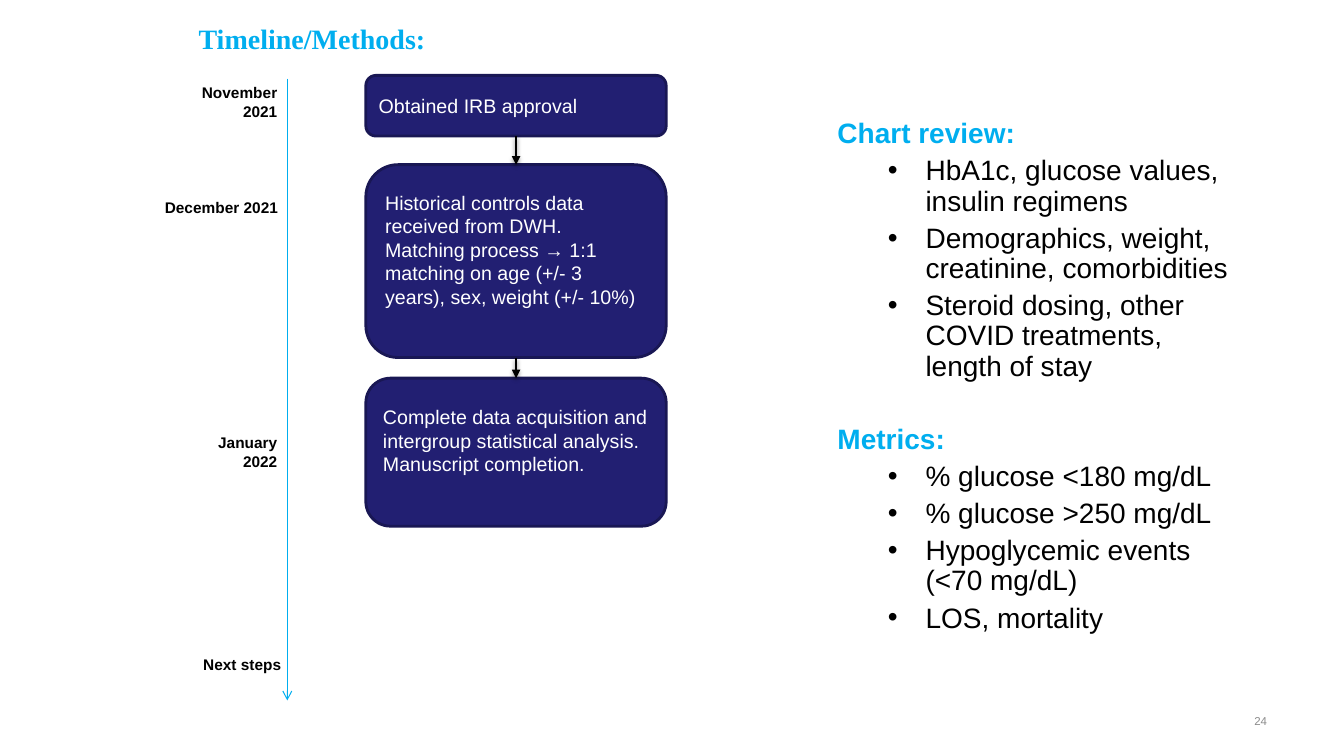
"""Build the study timeline and methods slide."""
from dataclasses import dataclass

from lxml.etree import SubElement
from pptx import Presentation
from pptx.dml.color import RGBColor
from pptx.enum.shapes import MSO_CONNECTOR, MSO_SHAPE
from pptx.enum.text import MSO_ANCHOR, MSO_AUTO_SIZE, PP_ALIGN
from pptx.oxml.ns import qn
from pptx.util import Cm, Pt


@dataclass(frozen=True)
class Theme:
    """Colours, fonts and type sizes."""
    accent: RGBColor = RGBColor(0x00, 0xAE, 0xEF)
    navy: RGBColor = RGBColor(0x22, 0x1F, 0x72)
    edge: RGBColor = RGBColor(0x19, 0x17, 0x54)
    black: RGBColor = RGBColor(0, 0, 0)
    white: RGBColor = RGBColor(255, 255, 255)
    grey: RGBColor = RGBColor(0x8C, 0x8C, 0x8C)
    sans: str = "Arial"
    serif: str = "Times New Roman"
    heading: float = 20
    step: float = 14
    label: float = 11
    number: float = 8.2


def apply(target, values):
    """Set every attribute named in a dict."""
    for name, value in values.items():
        setattr(target, name, value)


def place(shape, left, top, width, height):
    """Position a shape in centimetres."""
    apply(shape, {"left": Cm(left), "top": Cm(top),
                  "width": Cm(width), "height": Cm(height)})


class MethodsSlide:
    """Draws the elements of one slide in one style."""

    def __init__(self, page, theme):
        """Keep the page and its theme."""
        self.page = page
        self.theme = theme

    def add_span(self, para, text, size, color, bold=False, font=None):
        """Add formatted text to a paragraph."""
        span = para.add_run()
        span.text = text
        apply(span.font, {"size": Pt(size), "bold": bold,
                          "name": font or self.theme.sans})
        span.font.color.rgb = color

    def title(self, text, *area):
        """Fill the title placeholder."""
        box = self.page.shapes.title
        place(box, *area)
        apply(box.text_frame, {"vertical_anchor": MSO_ANCHOR.TOP, "word_wrap": True,
                               "auto_size": MSO_AUTO_SIZE.NONE})
        para = box.text_frame.paragraphs[0]
        para.alignment = PP_ALIGN.LEFT
        self.add_span(para, text, self.theme.heading, self.theme.accent, True,
                      self.theme.serif)

    def label(self, text, size, color, bold, anchor, *area):
        """Add a right-aligned text box."""
        box = self.page.shapes.add_textbox(*map(Cm, area))
        apply(box.text_frame, {"word_wrap": True, "vertical_anchor": anchor})
        para = box.text_frame.paragraphs[0]
        para.alignment = PP_ALIGN.RIGHT
        self.add_span(para, text, size, color, bold)

    def step(self, lines, bottom_inset, *area):
        """Add a rounded box for one step of the study."""
        box = self.page.shapes.add_shape(MSO_SHAPE.ROUNDED_RECTANGLE, *map(Cm, area))
        box.shadow.inherit = False
        box.fill.solid()
        box.fill.fore_color.rgb = self.theme.navy
        box.line.color.rgb = self.theme.edge
        box.line.width = Pt(2)
        frame = box.text_frame
        apply(frame, {"word_wrap": True, "vertical_anchor": MSO_ANCHOR.MIDDLE,
                      "margin_bottom": Cm(bottom_inset)})
        for index, line in enumerate(lines):
            para = frame.add_paragraph() if index else frame.paragraphs[0]
            para.alignment = PP_ALIGN.LEFT
            self.add_span(para, line, self.theme.step, self.theme.white)
        return box

    def arrow(self, start, end, color, width, head):
        """Add a straight arrow and return it with its effect list."""
        line = self.page.shapes.add_connector(
            MSO_CONNECTOR.STRAIGHT, *map(Cm, start + end))
        line.line.color.rgb = color
        line.line.width = Pt(width)
        properties = line.element.spPr
        SubElement(properties.find(qn("a:ln")), qn("a:tailEnd"), type=head)
        return line, SubElement(properties, qn("a:effectLst"))

    def join(self, upper, lower):
        """Link two steps with a softly shadowed arrow."""
        line, effects = self.arrow((0, 0), (0, 0), self.theme.black, 2, "triangle")
        line.begin_connect(upper, 2)
        line.end_connect(lower, 0)
        shadow = SubElement(effects, qn("a:outerShdw"), blurRad=str(Pt(3.1)),
                            dist=str(Pt(1.6)), dir="5400000", rotWithShape="0")
        tint = SubElement(shadow, qn("a:srgbClr"), val=str(self.theme.black))
        SubElement(tint, qn("a:alpha"), val="38000")

    def lists(self, sections, *area):
        """Fill the body placeholder with headed bullet lists."""
        box = self.page.placeholders[1]
        place(box, *area)
        frame = box.text_frame
        apply(frame, {"word_wrap": True, "vertical_anchor": MSO_ANCHOR.TOP,
                      "auto_size": MSO_AUTO_SIZE.NONE})
        for index, (heading, items) in enumerate(sections.items()):
            para = frame.add_paragraph() if index else frame.paragraphs[0]
            self.bullet(para, None, 0, 0)
            apply(para, {"line_spacing": Pt(42), "space_before": Pt(10 if index else 0)})
            self.add_span(para, heading, self.theme.heading, self.theme.accent, True)
            for item in items:
                para = frame.add_paragraph()
                para.level = 1
                self.bullet(para, "•", 2.22, -0.95)
                apply(para, {"line_spacing": 0.9, "space_before": Pt(5)})
                self.add_span(para, item, self.theme.heading, self.theme.black)

    def bullet(self, para, sign, margin, indent):
        """Set the bullet sign and indents of a paragraph."""
        para.alignment = PP_ALIGN.LEFT
        properties = para._p.get_or_add_pPr()
        properties.set("marL", str(Cm(margin)))
        properties.set("indent", str(Cm(indent)))
        if sign:
            SubElement(properties, qn("a:buFont"), typeface=self.theme.sans)
            SubElement(properties, qn("a:buChar"), char=sign)
        else:
            SubElement(properties, qn("a:buNone"))


DATES = [
    ("November 2021", 4.24, 1.98, 3.0, 1.19),
    ("December 2021", 3.84, 4.88, 3.42, 0.74),
    ("January 2022", 4.62, 10.8, 2.62, 1.19),
    ("Next steps", 4.72, 16.38, 2.62, 0.74),
]
STEPS = [
    (["Obtained IRB approval"], 0.13, 1.9, 1.53),
    (["Historical controls data received from DWH.",
      "Matching process → 1:1 matching on age (+/- 3 years), sex, weight (+/- 10%)"],
     0.72, 4.15, 4.86),
    (["Complete data acquisition and intergroup statistical analysis.",
      "Manuscript completion."], 0.72, 9.53, 3.73),
]
SECTIONS = {
    "Chart review:": [
        "HbA1c, glucose values, insulin regimens",
        "Demographics, weight, creatinine, comorbidities",
        "Steroid dosing, other COVID treatments, length of stay",
    ],
    "Metrics:": [
        "% glucose <180 mg/dL",
        "% glucose >250 mg/dL",
        "Hypoglycemic events (<70 mg/dL)",
        "LOS, mortality",
    ],
}


def main():
    """Build and save the deck."""
    deck = Presentation()
    apply(deck, {"slide_width": Cm(33.87), "slide_height": Cm(19.05)})
    theme = Theme()
    slide = MethodsSlide(deck.slides.add_slide(deck.slide_layouts[1]), theme)
    slide.title("Timeline/Methods:", 4.75, 0.41, 22.86, 1.73)
    slide.lists(SECTIONS, 20.85, 2.16, 10.69, 14.94)
    slide.arrow((7.24, 1.98), (7.24, 17.65), theme.accent, 0.75, "arrow")
    for text, *area in DATES:
        slide.label(text, theme.label, theme.black, True, MSO_ANCHOR.TOP, *area)
    boxes = [slide.step(lines, inset, 9.22, top, 7.57, height)
             for lines, inset, top, height in STEPS]
    for upper, lower in zip(boxes, boxes[1:]):
        slide.join(upper, lower)
    slide.label("24", theme.number, theme.grey, False, MSO_ANCHOR.MIDDLE,
                24.28, 17.65, 7.9, 1.02)
    deck.save("out.pptx")


if __name__ == "__main__":
    main()
